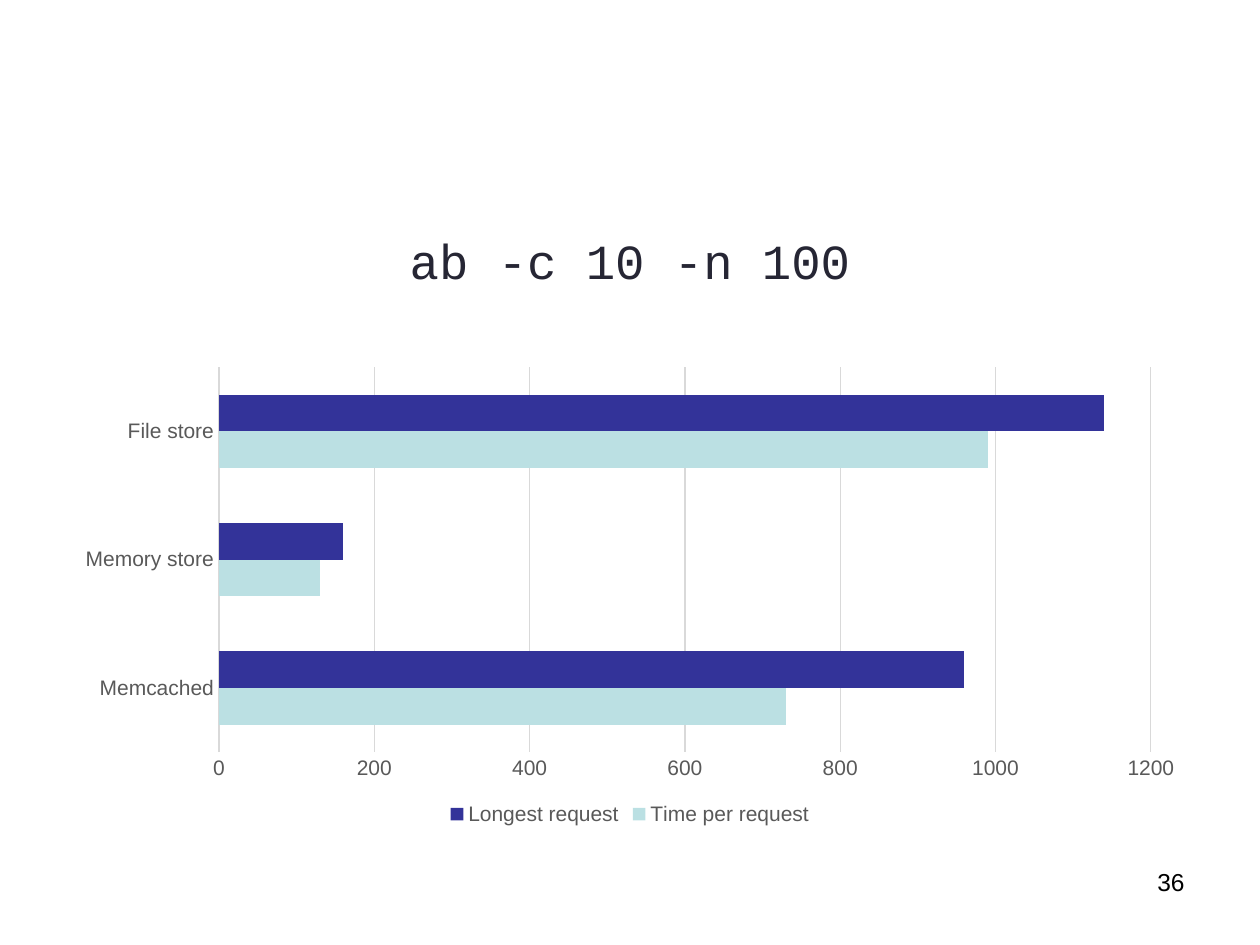
from pptx import Presentation
from pptx.chart.data import CategoryChartData
from pptx.dml.color import RGBColor
from pptx.enum.chart import XL_CHART_TYPE, XL_LEGEND_POSITION, XL_TICK_MARK
from pptx.enum.text import MSO_ANCHOR, PP_ALIGN
from pptx.util import Pt

STORES = ["Memcached", "Memory store", "File store"]
TIMINGS = [
    ("Time per request", [730, 130, 990], "BBE0E3"),
    ("Longest request", [960, 160, 1140], "333399"),
]
LABEL_COLOR = "595959"
LINE_COLOR = "D9D9D9"


def color(value):
    return RGBColor.from_string(value)


def style_font(font, size, value, name="Arial"):
    font.size = Pt(size)
    font.name = name
    font.color.rgb = color(value)


def style_line(line):
    line.width = Pt(0.75)
    line.color.rgb = color(LINE_COLOR)


def add_text(page, box, text, align, anchor, size, value, name="Arial"):
    frame = page.shapes.add_textbox(*map(Pt, box)).text_frame
    frame.word_wrap = True
    frame.vertical_anchor = anchor
    para = frame.paragraphs[0]
    para.text = text
    para.alignment = align
    style_font(para.font, size, value, name)


def add_timing_chart(page, box):
    data = CategoryChartData()
    data.categories = STORES
    for name, values, _ in TIMINGS:
        data.add_series(name, values)
    chart = page.shapes.add_chart(
        XL_CHART_TYPE.BAR_CLUSTERED, *map(Pt, box), data
    ).chart
    style_font(chart.font, 10, "000000")
    chart.has_title = False

    plot = chart.plots[0]
    plot.gap_width = 150
    plot.overlap = 0
    plot.vary_by_categories = False
    for series, (_, _, fill_color) in zip(plot.series, TIMINGS):
        series.format.fill.solid()
        series.format.fill.fore_color.rgb = color(fill_color)

    for axis in (chart.category_axis, chart.value_axis):
        axis.major_tick_mark = XL_TICK_MARK.NONE
        axis.minor_tick_mark = XL_TICK_MARK.NONE
        style_font(axis.tick_labels.font, 12, LABEL_COLOR)
    style_line(chart.category_axis.format.line)
    chart.value_axis.format.line.fill.background()
    chart.value_axis.has_major_gridlines = True
    style_line(chart.value_axis.major_gridlines.format.line)
    chart.value_axis.minimum_scale = 0
    chart.value_axis.maximum_scale = 1200
    chart.value_axis.major_unit = 200

    chart.has_legend = True
    chart.legend.position = XL_LEGEND_POSITION.BOTTOM
    chart.legend.include_in_layout = False
    style_font(chart.legend.font, 12, LABEL_COLOR)


def main():
    deck = Presentation()
    deck.slide_width, deck.slide_height = Pt(720), Pt(540)
    page = deck.slides.add_slide(deck.slide_layouts[6])
    add_text(page, (36, 106, 648, 85), "ab -c 10 -n 100", PP_ALIGN.CENTER,
             MSO_ANCHOR.MIDDLE, 28, "262634", "Courier New")
    add_timing_chart(page, (36, 204.5, 648, 270))
    add_text(page, (516, 492, 168, 37.5), "36", PP_ALIGN.RIGHT,
             MSO_ANCHOR.TOP, 14, "000000")
    deck.save("out.pptx")


if __name__ == "__main__":
    main()
